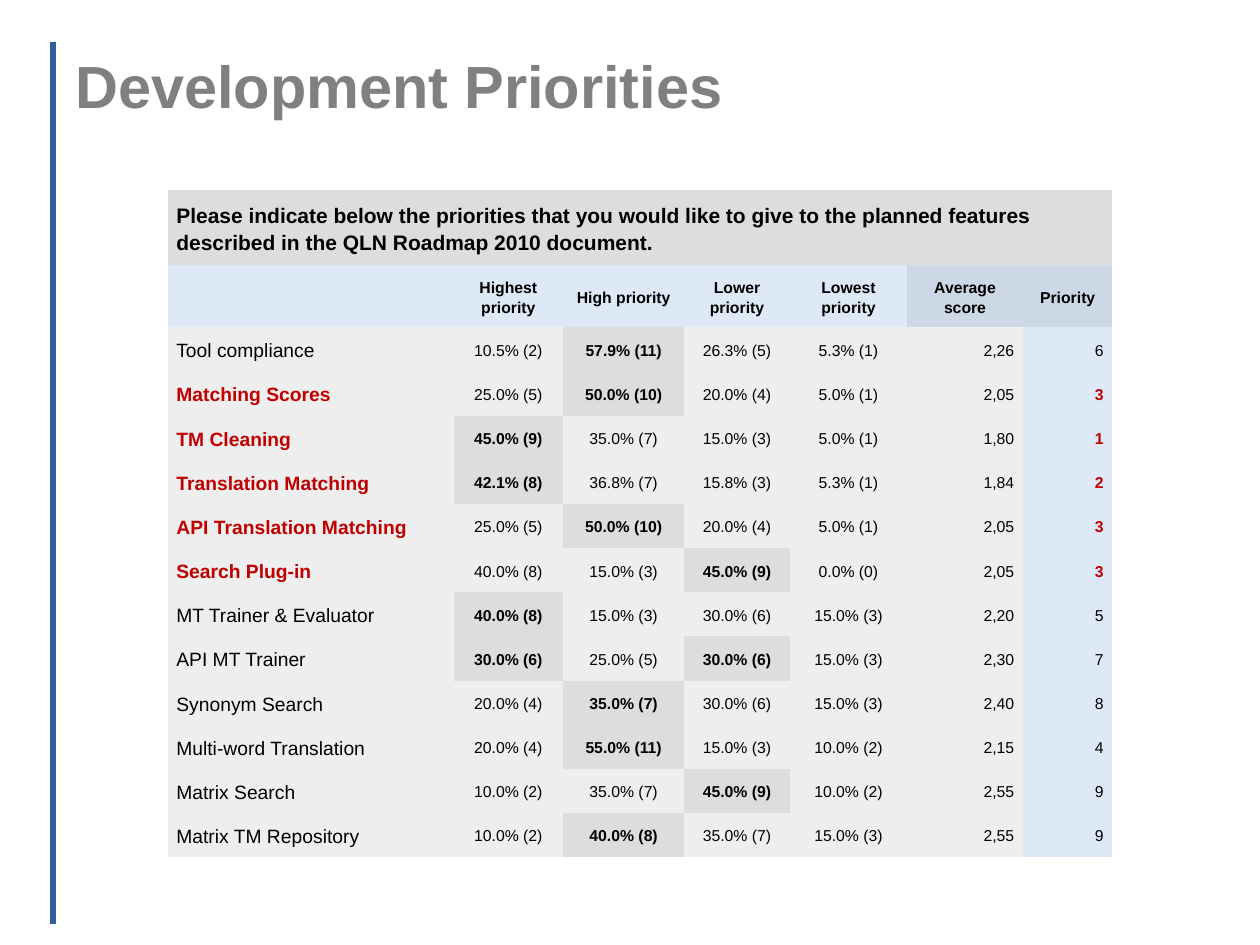
from dataclasses import dataclass

from pptx import Presentation
from pptx.dml.color import RGBColor
from pptx.enum.shapes import MSO_CONNECTOR
from pptx.enum.text import MSO_ANCHOR, PP_ALIGN
from pptx.oxml.ns import qn
from pptx.slide import Slide
from pptx.table import _Cell
from pptx.text.text import _Paragraph
from pptx.util import Inches, Length, Pt
from lxml.etree import SubElement


@dataclass(frozen=True)
class Theme:
    font: str = "Arial"
    rule: str = "345F98"
    heading: str = "808080"
    ink: str = "000000"
    urgent: str = "C00000"
    plain: str = "EEEEEE"
    strong: str = "DDDDDD"
    pale_blue: str = "DEE9F7"
    deep_blue: str = "CDD8E6"
    heading_size: float = 34
    question_size: float = 12
    feature_size: float = 11
    figure_size: float = 9


@dataclass(frozen=True)
class Feature:
    name: str
    votes: tuple[int, int, int, int]

    @property
    def average(self) -> float:
        weighted = sum(rank * count for rank, count in enumerate(self.votes, 1))
        return weighted / sum(self.votes)


@dataclass(frozen=True)
class Style:
    fill: str
    size: float
    align: PP_ALIGN = PP_ALIGN.LEFT
    bold: bool = False
    color: str = "000000"


THEME = Theme()
WIDTH, HEIGHT = 10, 7.5
COLUMN_SHARES = (22.7, 8.7, 9.6, 8.4, 9.3, 9.2, 7.1)
QUESTION_SHARE, HEADER_SHARE, FEATURE_SHARE = 7.62, 6.56, 4.54
TOP_PRIORITIES = 3
NO_STYLE_NO_GRID = "{2D5ABB26-0587-4C30-8999-92F81FD0307C}"

QUESTION = (
    "Please indicate below the priorities that you would like to give to the "
    "planned features described in the QLN Roadmap 2010 document."
)
HEADERS = (
    "", "Highest priority", "High priority", "Lower priority",
    "Lowest priority", "Average\nscore", "Priority",
)
FEATURES = (
    Feature("Tool compliance", (2, 11, 5, 1)),
    Feature("Matching Scores", (5, 10, 4, 1)),
    Feature("TM Cleaning", (9, 7, 3, 1)),
    Feature("Translation Matching", (8, 7, 3, 1)),
    Feature("API Translation Matching", (5, 10, 4, 1)),
    Feature("Search Plug-in", (8, 3, 9, 0)),
    Feature("MT Trainer & Evaluator", (8, 3, 6, 3)),
    Feature("API MT Trainer", (6, 5, 6, 3)),
    Feature("Synonym Search", (4, 7, 6, 3)),
    Feature("Multi-word Translation", (4, 11, 3, 2)),
    Feature("Matrix Search", (2, 7, 9, 2)),
    Feature("Matrix TM Repository", (2, 8, 7, 3)),
)


def across(percent: float) -> Length:
    return Inches(WIDTH * percent / 100)


def down(percent: float) -> Length:
    return Inches(HEIGHT * percent / 100)


def write(paragraph: _Paragraph, text: str, size: float, bold: bool, color: str) -> None:
    for index, line in enumerate(text.split("\n")):
        if index:
            paragraph.add_line_break()
        run = paragraph.add_run()
        run.text = line
        run.font.name = THEME.font
        run.font.size = Pt(size)
        run.font.bold = bold
        run.font.color.rgb = RGBColor.from_string(color)


def fill_cell(cell: _Cell, text: str, style: Style) -> None:
    cell.fill.solid()
    cell.fill.fore_color.rgb = RGBColor.from_string(style.fill)
    cell.vertical_anchor = MSO_ANCHOR.MIDDLE
    cell.margin_left = cell.margin_right = Inches(0.07)
    cell.margin_top = cell.margin_bottom = Inches(0.07)
    paragraph = cell.text_frame.paragraphs[0]
    paragraph.alignment = style.align
    paragraph.line_spacing = 1.15
    if text:
        write(paragraph, text, style.size, style.bold, style.color)


def feature_cells(feature: Feature, priority: int) -> list[tuple[str, Style]]:
    urgent = priority <= TOP_PRIORITIES
    color = THEME.urgent if urgent else THEME.ink
    small = THEME.figure_size
    cells = [(feature.name, Style(THEME.plain, THEME.feature_size, bold=urgent, color=color))]
    for count in feature.votes:
        leading = count == max(feature.votes)
        fill = THEME.strong if leading else THEME.plain
        share = count / sum(feature.votes)
        cells.append((f"{share:.1%} ({count})", Style(fill, small, PP_ALIGN.CENTER, leading)))
    average = f"{feature.average:.2f}".replace(".", ",")
    cells.append((average, Style(THEME.plain, small, PP_ALIGN.RIGHT)))
    cells.append((str(priority), Style(THEME.pale_blue, small, PP_ALIGN.RIGHT, urgent, color)))
    return cells


def draw_heading(slide: Slide) -> None:
    rule = slide.shapes.add_connector(
        MSO_CONNECTOR.STRAIGHT, across(4.2), down(4.4), across(4.2), down(97.8)
    )
    rule.line.color.rgb = RGBColor.from_string(THEME.rule)
    rule.line.width = Pt(3)
    SubElement(rule.element.spPr, qn("a:effectLst"))

    heading = slide.shapes.add_textbox(across(5), down(4), across(90), down(16.67)).text_frame
    heading.word_wrap = True
    heading.margin_top = Inches(0.09)
    write(heading.paragraphs[0], "Development Priorities", THEME.heading_size, True, THEME.heading)


def draw_survey(slide: Slide) -> None:
    row_shares = (QUESTION_SHARE, HEADER_SHARE) + (FEATURE_SHARE,) * len(FEATURES)
    frame = slide.shapes.add_table(
        len(row_shares), len(COLUMN_SHARES), across(13.3), down(20.1),
        across(sum(COLUMN_SHARES)), down(sum(row_shares)),
    )
    survey = frame.table
    survey.first_row = survey.horz_banding = False
    next(frame.element.iter(qn("a:tableStyleId"))).text = NO_STYLE_NO_GRID
    for column, share in zip(survey.columns, COLUMN_SHARES):
        column.width = across(share)
    for row, share in zip(survey.rows, row_shares):
        row.height = down(share)

    question = survey.cell(0, 0)
    question.merge(survey.cell(0, len(COLUMN_SHARES) - 1))
    fill_cell(question, QUESTION, Style(THEME.strong, THEME.question_size, bold=True))

    for column, header in enumerate(HEADERS):
        fill = THEME.deep_blue if column >= 5 else THEME.pale_blue
        style = Style(fill, THEME.figure_size, PP_ALIGN.CENTER, True)
        fill_cell(survey.cell(1, column), header, style)

    ranking = sorted({feature.average for feature in FEATURES})
    for row, feature in enumerate(FEATURES, 2):
        priority = ranking.index(feature.average) + 1
        for column, (text, style) in enumerate(feature_cells(feature, priority)):
            fill_cell(survey.cell(row, column), text, style)


def main() -> None:
    deck = Presentation()
    deck.slide_width, deck.slide_height = Inches(WIDTH), Inches(HEIGHT)
    slide = deck.slides.add_slide(deck.slide_layouts[6])
    draw_heading(slide)
    draw_survey(slide)
    deck.save("out.pptx")


if __name__ == "__main__":
    main()
